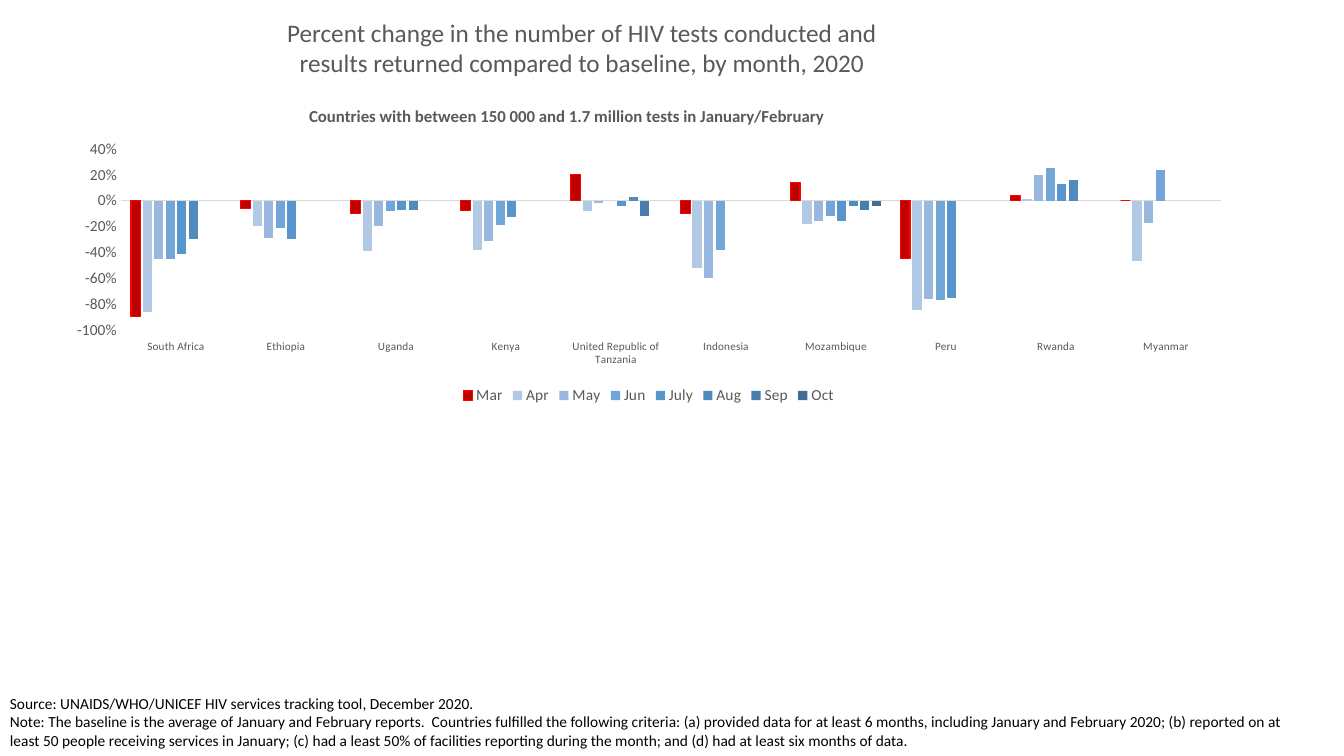
"""Build a slide charting the change in HIV tests by country and month in 2020."""
from lxml.etree import SubElement
from pptx import Presentation
from pptx.chart.data import CategoryChartData
from pptx.dml.color import RGBColor
from pptx.enum.chart import XL_CHART_TYPE, XL_LEGEND_POSITION, XL_TICK_LABEL_POSITION, XL_TICK_MARK
from pptx.enum.text import MSO_ANCHOR, MSO_AUTO_SIZE, PP_ALIGN
from pptx.oxml.ns import qn
from pptx.util import Emu, Pt

TITLE = ("Percent change in the number of HIV tests conducted and results returned "
         "compared to baseline, by month, 2020")
CHART_TITLE = "Countries with between 150 000 and 1.7 million tests in January/February"
NOTES = [
    "Source: UNAIDS/WHO/UNICEF HIV services tracking tool, December 2020.",
    "Note: The baseline is the average of January and February reports.  Countries fulfilled the "
    "following criteria: (a) provided data for at least 6 months, including January and February 2020; "
    "(b) reported on at least 50 people receiving services in January; (c) had a least 50% of facilities "
    "reporting during the month; and (d) had at least six months of data.",
]
COUNTRIES = ["South Africa", "Ethiopia", "Uganda", "Kenya", "United Republic of Tanzania",
             "Indonesia", "Mozambique", "Peru", "Rwanda", "Myanmar"]
NA = None
MONTHS = [
    ("Mar", "C00000", [-0.9, -0.06, -0.1, -0.08, 0.2, -0.1, 0.14, -0.45, 0.04, 0]),
    ("Apr", "B2C9E6", [-0.86, -0.2, -0.39, -0.38, -0.08, -0.52, -0.18, -0.85, 0.01, -0.47]),
    ("May", "98B8E0", [-0.45, -0.29, -0.2, -0.31, -0.02, -0.6, -0.16, -0.76, 0.2, -0.17]),
    ("Jun", "72A5D8", [-0.45, -0.21, -0.08, -0.19, NA, -0.38, -0.12, -0.77, 0.25, 0.24]),
    ("July", "5895CD", [-0.41, -0.3, -0.07, -0.13, -0.04, NA, -0.16, -0.75, 0.13, NA]),
    ("Aug", "518ABD", [-0.3, NA, -0.07, NA, 0.03, NA, -0.04, NA, 0.16, NA]),
    ("Sep", "497DAC", [NA, NA, NA, NA, -0.12, NA, -0.07, NA, NA, NA]),
    ("Oct", "406E97", [NA, NA, NA, NA, NA, NA, -0.04, NA, NA, NA]),
]
THEME = {"font": "Calibri", "text": "595959", "note": "000000", "axis": "D9D9D9", "accent": "FF0000",
         "title": 18, "heading": 12, "body": 11, "small": 8}
TITLE_BOX = (246, 12, 672, 72)
CHART_BOX = (53, 92, 1191, 317)
PLOT_BOX = (121, 149, 1100, 181)
HEADING_AT = (306, 102)
NOTE_BOX = (0, 689, 1306, 67)


def px(n):
    return Emu(round(n * 914400 / 100.8))


def color(name):
    return RGBColor.from_string(THEME[name])


def style(font, size, name="text", bold=False):
    font.name, font.size, font.bold = THEME["font"], Pt(THEME[size]), bold
    font.color.rgb = color(name)


def fill_text(tf, lines, size, name, align):
    tf.text = "\n".join(lines)
    tf.word_wrap = True
    tf.auto_size = MSO_AUTO_SIZE.NONE
    tf.vertical_anchor = MSO_ANCHOR.TOP
    for p in tf.paragraphs:
        p.alignment = align
        for r in p.runs:
            style(r.font, size, name)


def set_layout(parent, index, box, inner=False):
    for old in parent.findall(qn("c:layout")):
        parent.remove(old)
    layout = SubElement(parent, qn("c:layout"))
    parent.insert(index, layout)
    manual = SubElement(layout, qn("c:manualLayout"))
    left, top, width, height = CHART_BOX
    values = [("xMode", "edge"), ("yMode", "edge"),
              ("x", round((box[0] - left) / width, 4)), ("y", round((box[1] - top) / height, 4))]
    if inner:
        values.insert(0, ("layoutTarget", "inner"))
        values += [("w", round(box[2] / width, 4)), ("h", round(box[3] / height, 4))]
    for tag, value in values:
        SubElement(manual, qn(f"c:{tag}")).set("val", str(value))


def add_month_chart(s):
    data = CategoryChartData(number_format="0%")
    data.categories = COUNTRIES
    for month, _, values in MONTHS:
        data.add_series(month, values)
    chart = s.shapes.add_chart(XL_CHART_TYPE.COLUMN_CLUSTERED, *map(px, CHART_BOX), data).chart
    style(chart.font, "body")

    chart.has_title = True
    tf = chart.chart_title.text_frame
    tf.text = CHART_TITLE
    style(tf.paragraphs[0].runs[0].font, "heading", bold=True)
    chart.chart_title.include_in_layout = False
    set_layout(chart.chart_title._element, 1, HEADING_AT)
    set_layout(chart._chartSpace.chart.plotArea, 0, PLOT_BOX, inner=True)

    chart.has_legend = True
    chart.legend.position = XL_LEGEND_POSITION.BOTTOM
    chart.legend.include_in_layout = False
    style(chart.legend.font, "body")

    for axis, size in ((chart.category_axis, "small"), (chart.value_axis, "body")):
        axis.major_tick_mark = axis.minor_tick_mark = XL_TICK_MARK.NONE
        axis.has_major_gridlines = False
        style(axis.tick_labels.font, size)
    chart.category_axis.tick_label_position = XL_TICK_LABEL_POSITION.LOW
    chart.category_axis.format.line.color.rgb = color("axis")
    chart.category_axis.format.line.width = Pt(0.75)
    axis = chart.value_axis
    axis.minimum_scale, axis.maximum_scale, axis.major_unit = -1, 0.4, 0.2
    axis.tick_labels.number_format = "0%"
    axis.tick_labels.number_format_is_linked = False
    axis.format.line.fill.background()

    plot = chart.plots[0]
    plot.gap_width, plot.overlap, plot.vary_by_categories = 219, -27, False
    for series, (_, fill, _) in zip(plot.series, MONTHS):
        series.invert_if_negative = False
        series.format.fill.solid()
        series.format.fill.fore_color.rgb = RGBColor.from_string(fill)
    line = plot.series[0].format.line
    line.color.rgb, line.width = color("accent"), Pt(0.75)


def main():
    prs = Presentation()
    prs.slide_width, prs.slide_height = px(1344), px(756)
    s = prs.slides.add_slide(prs.slide_layouts[5])
    title = s.shapes.title
    title.left, title.top, title.width, title.height = map(px, TITLE_BOX)
    fill_text(title.text_frame, [TITLE], "title", "text", PP_ALIGN.CENTER)
    add_month_chart(s)
    notes = s.shapes.add_textbox(*map(px, NOTE_BOX))
    fill_text(notes.text_frame, NOTES, "body", "note", PP_ALIGN.LEFT)
    prs.save("out.pptx")


if __name__ == "__main__":
    main()
